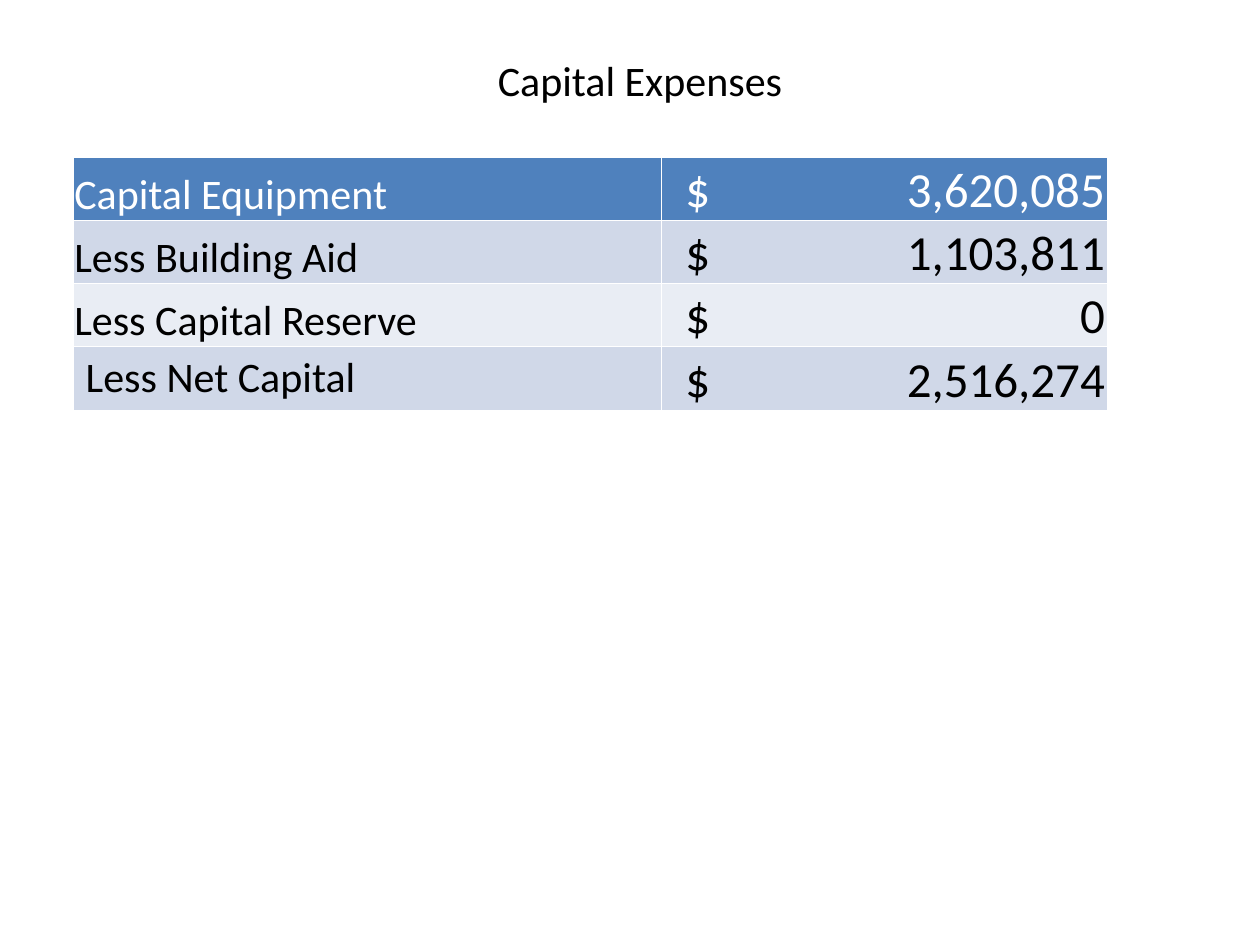
from dataclasses import dataclass

from lxml import etree
from pptx import Presentation
from pptx.dml.color import RGBColor
from pptx.enum.text import MSO_ANCHOR, PP_ALIGN
from pptx.oxml.ns import qn
from pptx.util import Inches, Pt

CENTER = PP_ALIGN.CENTER
LEFT = PP_ALIGN.LEFT
MIDDLE = MSO_ANCHOR.MIDDLE
BOTTOM = MSO_ANCHOR.BOTTOM
TITLE_ONLY = 5


@dataclass(frozen=True)
class Theme:
    font: str = "Calibri"
    text: str = "000000"
    header_text: str = "FFFFFF"
    header_fill: str = "4F81BD"
    band_fills: tuple = ("D0D8E8", "E9EDF4")
    label_size: int = 24
    amount_size: int = 28


THEME = Theme()
COL_WIDTHS = (4.67, 3.54)
ROW_HEIGHT = 0.5
EDGE = 0.01
DOLLAR_INDENT = 0.19
EXPENSES = [
    ("Capital Equipment", "3,620,085"),
    ("Less Building Aid", "1,103,811"),
    ("Less Capital Reserve", "0"),
    ("Less Net Capital", "2,516,274"),
]


def style_text(p, size, color):
    for r in p.runs:
        r.font.name = THEME.font
        r.font.size = Pt(size)
        r.font.bold = False
        r.font.color.rgb = RGBColor.from_string(color)


def add_right_tab(p, position):
    tabs = etree.SubElement(p._p.get_or_add_pPr(), qn("a:tabLst"))
    etree.SubElement(tabs, qn("a:tab"), pos=str(Inches(position)), algn="r")


def set_tight_margins(cell, left=EDGE):
    cell.vertical_anchor = BOTTOM
    cell.margin_left = Inches(left)
    cell.margin_right = cell.margin_top = Inches(EDGE)
    cell.margin_bottom = 0


def fill_cell(cell, text, size, color, fill):
    cell.fill.solid()
    cell.fill.fore_color.rgb = RGBColor.from_string(fill)
    p = cell.text_frame.paragraphs[0]
    p.text = text
    p.alignment = LEFT
    style_text(p, size, color)
    return p


def add_title(s, text):
    title = s.shapes.title
    title.left, title.top = Inches(0.83), Inches(0.25)
    title.width, title.height = Inches(8.5), Inches(0.77)
    tf = title.text_frame
    tf.text = text
    tf.vertical_anchor = MIDDLE
    p = tf.paragraphs[0]
    p.alignment = CENTER
    style_text(p, THEME.label_size, THEME.text)


def add_expense_table(s, expenses):
    rows = len(expenses)
    table = s.shapes.add_table(
        rows, len(COL_WIDTHS), Inches(0.58), Inches(1.25),
        Inches(sum(COL_WIDTHS)), Inches(rows * ROW_HEIGHT)).table
    for column, width in zip(table.columns, COL_WIDTHS):
        column.width = Inches(width)
    for i, (label, amount) in enumerate(expenses):
        table.rows[i].height = Inches(ROW_HEIGHT)
        color = THEME.text if i else THEME.header_text
        fill = THEME.band_fills[(i - 1) % 2] if i else THEME.header_fill
        label_cell, amount_cell = table.cell(i, 0), table.cell(i, 1)
        fill_cell(label_cell, label, THEME.label_size, color, fill)
        if i < rows - 1:
            set_tight_margins(label_cell)
        set_tight_margins(amount_cell, DOLLAR_INDENT)
        p = fill_cell(amount_cell, f"$\t{amount}", THEME.amount_size, color, fill)
        add_right_tab(p, COL_WIDTHS[1] - DOLLAR_INDENT - 2 * EDGE)


def main():
    prs = Presentation()
    prs.slide_width, prs.slide_height = Inches(10), Inches(7.5)
    s = prs.slides.add_slide(prs.slide_layouts[TITLE_ONLY])
    add_title(s, "Capital Expenses")
    add_expense_table(s, EXPENSES)
    prs.save("out.pptx")


if __name__ == "__main__":
    main()
